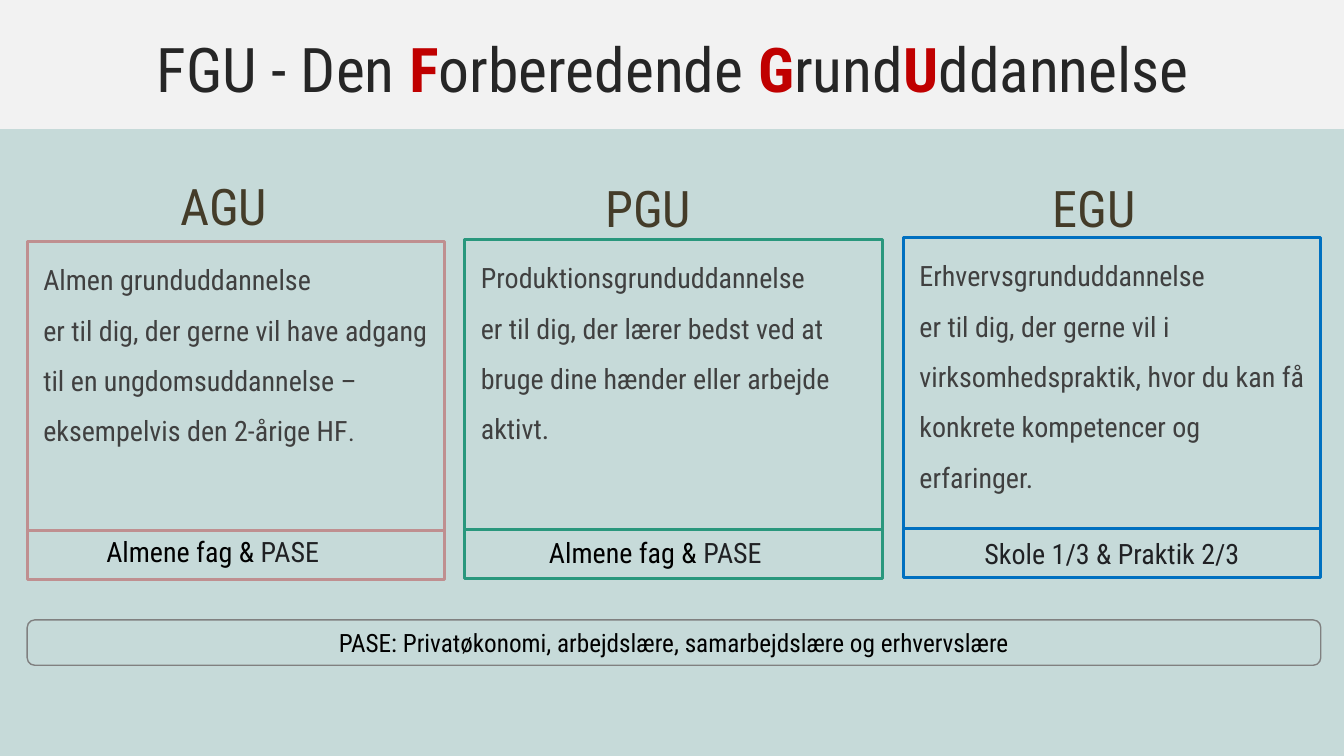
from pptx import Presentation
from pptx.dml.color import RGBColor
from pptx.enum.shapes import MSO_SHAPE
from pptx.enum.text import MSO_ANCHOR, MSO_AUTO_SIZE, PP_ALIGN
from pptx.util import Inches, Pt

RECT, ROUND = MSO_SHAPE.RECTANGLE, MSO_SHAPE.ROUNDED_RECTANGLE
TOP, MIDDLE = MSO_ANCHOR.TOP, MSO_ANCHOR.MIDDLE
LEFT, CENTER = PP_ALIGN.LEFT, PP_ALIGN.CENTER
FONT = "Roboto Condensed"

COLORS = {
    "page": "C6DAD9", "band": "F2F2F2", "title": "262626", "red": "C00000",
    "head": "443C29", "body": "404040", "black": "000000", "dark": "202124",
    "rose": "BF8F90", "green": "29977D", "blue": "0070C0", "gray": "808080",
}

TITLE = [("FGU - Den ", {}), ("F", {"color": "red", "bold": True}),
         ("orberedende ", {}), ("G", {"color": "red", "bold": True}),
         ("rund", {}), ("U", {"color": "red", "bold": True}),
         ("ddannelse", {})]
PASE = [("Almene fag & ", {}), ("PASE", {"color": "dark"})]
TRACKS = [
    {"head": "AGU", "color": "rose", "left": 0.27, "top": 2.4, "base": 5.26,
     "head_mid": 2.22, "head_top": 1.69, "inset": 0.16,
     "body": [[("Almen grunduddannelse", {})],
              [("er til dig, der gerne vil have adgang til en "
                "ungdomsuddannelse – eksempelvis den 2-årige HF", {}),
               (".", {"size": 18})]],
     "foot": PASE, "foot_mid": 2.11, "foot_top": 5.25},
    {"head": "PGU", "color": "green", "left": 4.61, "top": 2.38, "base": 5.25,
     "head_mid": 6.43, "head_top": 1.71, "inset": 0.16,
     "body": [[("Produktionsgrunduddannelse", {})],
              [("er til dig, der lærer bedst ved at bruge dine hænder "
                "eller arbejde aktivt.", {})]],
     "foot": PASE, "foot_mid": 6.5, "foot_top": 5.26},
    {"head": "EGU", "color": "blue", "left": 8.96, "top": 2.36, "base": 5.24,
     "head_mid": 10.85, "head_top": 1.71, "inset": 0.1,
     "body": [[("Erhvervsgrunduddannelse", {})],
              [("er til dig, der gerne vil i virksomhedspraktik, hvor du "
                "kan få konkrete kompetencer og erfaringer.", {})]],
     "foot": [("Skole 1/3 & Praktik 2/3", {"color": "dark"})],
     "foot_mid": 11.03, "foot_top": 5.27},
]
NOTE = "PASE: Privatøkonomi, arbejdslære, samarbejdslære og erhvervslære"
CARD_W, FOOT_H = 4.14, 0.49


def rgb(name):
    return RGBColor.from_string(COLORS[name])


def write(shape, paras, size=20, color="black", align=CENTER, anchor=TOP,
          spacing=1.0, inset=(0.1, 0.05, 0.1, 0.05)):
    frame = shape.text_frame
    frame.word_wrap = True
    frame.auto_size = MSO_AUTO_SIZE.NONE
    frame.vertical_anchor = anchor
    (frame.margin_left, frame.margin_top,
     frame.margin_right, frame.margin_bottom) = map(Inches, inset)
    for i, runs in enumerate(paras):
        para = frame.add_paragraph() if i else frame.paragraphs[0]
        para.alignment = align
        para.line_spacing = spacing
        para.space_before = Pt(0)
        for text, look in runs:
            run = para.add_run()
            run.text = text
            font = run.font
            font.name = FONT
            font.size = Pt(look.get("size", size))
            font.bold = look.get("bold", False)
            font.color.rgb = rgb(look.get("color", color))


def frame_box(slide, box, kind=RECT, fill=None, line=None, width=2.25):
    shape = slide.shapes.add_shape(kind, *map(Inches, box))
    shape.shadow.inherit = False
    if fill:
        shape.fill.solid()
        shape.fill.fore_color.rgb = rgb(fill)
    else:
        shape.fill.background()
    if line:
        shape.line.color.rgb = rgb(line)
        shape.line.width = Pt(width)
    else:
        shape.line.fill.background()
    return shape


def label(slide, mid, top, width, height, runs, **look):
    box = slide.shapes.add_textbox(
        *map(Inches, (mid - width / 2, top, width, height)))
    write(box, [runs], **look)


def add_track(slide, track):
    left, top, base = track["left"], track["top"], track["base"]
    card = frame_box(slide, (left, top, CARD_W, base - top),
                     line=track["color"])
    write(card, track["body"], color="body", align=LEFT, spacing=1.5,
          inset=(0.16, 0.04, track["inset"], 0.04))
    frame_box(slide, (left, base, CARD_W, FOOT_H), line=track["color"])
    label(slide, track["head_mid"], track["head_top"], 3, 0.71,
          [(track["head"], {})], size=36, color="head")
    label(slide, track["foot_mid"], track["foot_top"], 2.8, 0.44,
          track["foot"], anchor=MIDDLE)


def main():
    deck = Presentation()
    deck.slide_width, deck.slide_height = Inches(13.33), Inches(7.5)
    slide = deck.slides.add_slide(deck.slide_layouts[5])
    slide.background.fill.solid()
    slide.background.fill.fore_color.rgb = rgb("page")

    title = slide.shapes.title
    band = frame_box(slide, (0, 0, 13.33, 1.28), fill="band")
    title._element.addprevious(band._element)
    title.left, title.top, title.width, title.height = map(
        Inches, (0.01, 0.26, 13.33, 0.84))
    write(title, [TITLE], size=44, color="title")

    for track in TRACKS:
        add_track(slide, track)

    note = frame_box(slide, (0.27, 6.15, 12.83, 0.45), kind=ROUND,
                     line="gray", width=1)
    write(note, [[(NOTE, {})]], size=18)
    deck.save("out.pptx")


if __name__ == "__main__":
    main()
